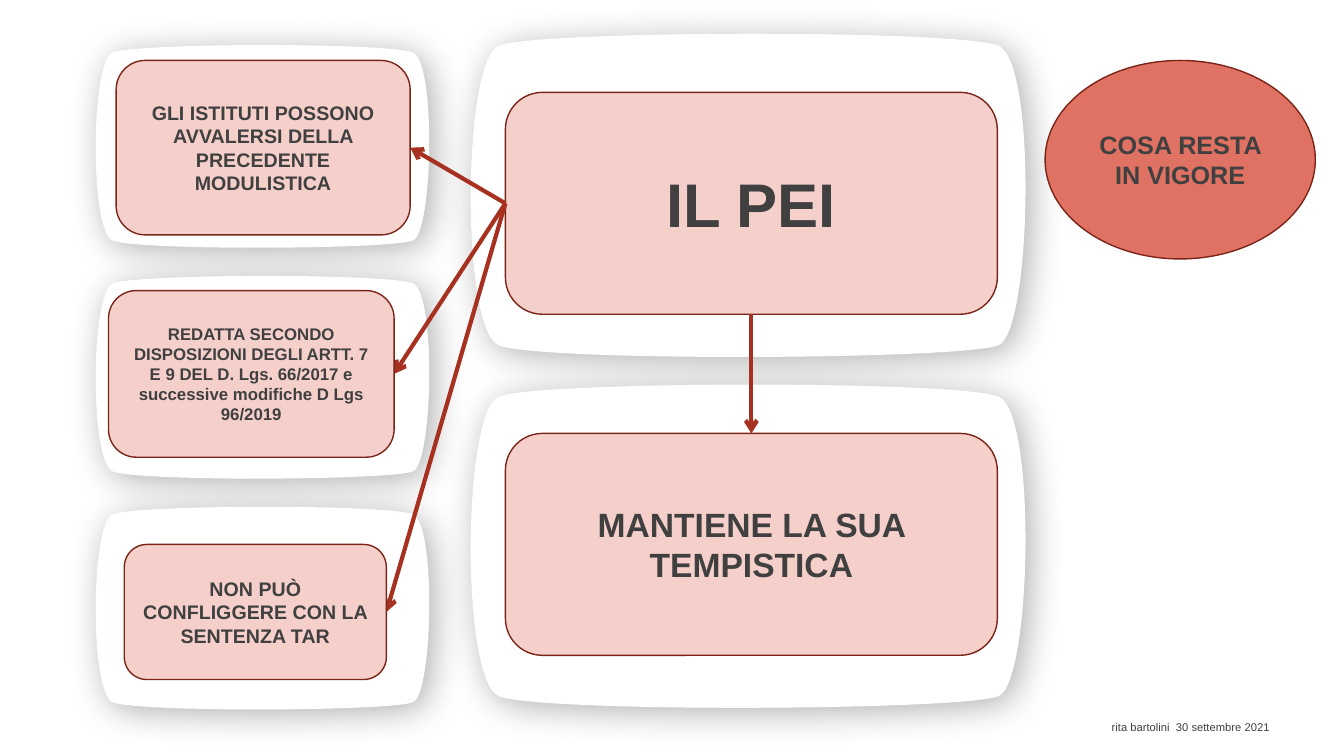
from lxml import etree
from pptx import Presentation
from pptx.dml.color import RGBColor
from pptx.enum.shapes import MSO_CONNECTOR as Connector, MSO_SHAPE as Shape
from pptx.enum.text import MSO_ANCHOR as Anchor, PP_ALIGN as Align
from pptx.oxml import parse_xml
from pptx.oxml.ns import nsdecls, qn
from pptx.util import Pt

WHITE = RGBColor(0xFF, 0xFF, 0xFF)
PINK = RGBColor(0xF5, 0xD0, 0xCB)
CORAL = RGBColor(0xE0, 0x72, 0x63)
OUTLINE = RGBColor(0x7B, 0x24, 0x18)
ARROW = RGBColor(0xA6, 0x31, 0x21)
INK = RGBColor(0x40, 0x40, 0x40)

# Bulging frame in thousandths of its box: a start point, then Bezier segments.
FRAME_START = (933, 50)
FRAME_CURVES = [
    ((1000, 100), (990, 910), (933, 950)),
    ((876, 994), (131, 1000), (66, 950)),
    ((0, 900), (3, 97), (66, 50)),
    ((128, 3), (865, 0), FRAME_START),
]

SHADOW = f"""<a:effectLst {nsdecls('a')}>
  <a:outerShdw blurRad="{Pt(25)}" dist="{Pt(5)}" dir="2700000" algn="ctr" rotWithShape="0">
    <a:srgbClr val="000000"><a:alpha val="30000"/></a:srgbClr>
  </a:outerShdw>
</a:effectLst>"""


def add_segment(outline, tag, points):
    segment = etree.SubElement(outline, qn(tag))
    for x, y in points:
        etree.SubElement(segment, qn("a:pt"), x=str(x), y=str(y))


def add_frame(slide, left, top, width, height):
    """Build the box as a freeform, then give its outline the curved segments."""
    right, bottom = left + width, top + height
    builder = slide.shapes.build_freeform(Pt(left), Pt(top))
    builder.add_line_segments(
        [(Pt(x), Pt(y)) for x, y in ((right, top), (right, bottom), (left, bottom))])
    frame = builder.convert_to_shape()
    outline = frame._element.spPr.find(".//" + qn("a:path"))
    for segment in list(outline):
        outline.remove(segment)
    outline.set("w", "1000")
    outline.set("h", "1000")
    add_segment(outline, "a:moveTo", [FRAME_START])
    for curve in FRAME_CURVES:
        add_segment(outline, "a:cubicBezTo", curve)
    add_segment(outline, "a:close", [])
    frame.fill.solid()
    frame.fill.fore_color.rgb = WHITE
    frame.line.fill.background()
    frame._element.spPr.append(parse_xml(SHADOW))


def write(shape, text, size, bold):
    shape.text_frame.word_wrap = True
    para = shape.text_frame.paragraphs[0]
    para.text = text
    font = para.runs[0].font
    font.name, font.size, font.bold = "Arial", Pt(size), bold
    font.color.rgb = INK
    return para


def add_box(slide, kind, bounds, text, size, fill):
    box = slide.shapes.add_shape(kind, *map(Pt, bounds))
    box.shadow.inherit = False
    box.fill.solid()
    box.fill.fore_color.rgb = fill
    box.line.color.rgb = OUTLINE
    box.line.width = Pt(1)
    box.text_frame.vertical_anchor = Anchor.MIDDLE
    write(box, text, size, True).alignment = Align.CENTER
    return box


def add_arrow(slide, source, source_site, target, target_site):
    """Join two boxes (sites: 0 top, 1 left, 2 bottom, 3 right), under the target."""
    arrow = slide.shapes.add_connector(Connector.STRAIGHT, 0, 0, 0, 0)
    arrow.begin_connect(source, source_site)
    arrow.end_connect(target, target_site)
    arrow.line.color.rgb = ARROW
    arrow.line.width = Pt(3)
    etree.SubElement(arrow.line._get_or_add_ln(), qn("a:tailEnd"), type="arrow")
    etree.SubElement(arrow._element.spPr, qn("a:effectLst"))
    target._element.addprevious(arrow._element)


def add_frames(slide):
    for row in range(2):
        add_frame(slide, 329, 20.9 + row * 250.6, 412, 237.6)
    for row in range(3):
        add_frame(slide, 64, 30.2 + row * 164.9, 247.7, 149)


def add_map(slide):
    plan = add_box(slide, Shape.ROUNDED_RECTANGLE, (361, 66, 351.4, 158.5), "IL PEI", 44, PINK)
    timing = add_box(slide, Shape.ROUNDED_RECTANGLE, (361, 309.6, 351.4, 158.5),
                     "MANTIENE LA SUA TEMPISTICA", 24, PINK)
    add_arrow(slide, plan, 2, timing, 0)
    conditions = [
        ((77.5, 207.6, 204, 119),
         "REDATTA SECONDO DISPOSIZIONI DEGLI ARTT. 7 E 9 DEL D. Lgs. 66/2017 "
         "e successive modifiche D Lgs 96/2019", 12),
        ((83, 43.2, 210, 124.6),
         "GLI ISTITUTI POSSONO AVVALERSI DELLA PRECEDENTE MODULISTICA", 14),
        ((88.8, 388.9, 187.2, 96.5), "NON PUÒ CONFLIGGERE CON LA SENTENZA TAR", 14),
    ]
    for bounds, text, size in conditions:
        condition = add_box(slide, Shape.ROUNDED_RECTANGLE, bounds, text, size, PINK)
        add_arrow(slide, plan, 1, condition, 3)


def add_signature(slide):
    signature = slide.shapes.add_textbox(Pt(787), Pt(511.2), Pt(172.8), Pt(28.8))
    write(signature, "rita bartolini  30 settembre 2021", 8, False)


def main():
    deck = Presentation()
    deck.slide_width, deck.slide_height = Pt(960), Pt(540)
    slide = deck.slides.add_slide(deck.slide_layouts[6])
    add_frames(slide)
    add_map(slide)
    add_signature(slide)
    add_box(slide, Shape.OVAL, (746.5, 43.2, 193, 141.8), "COSA RESTA IN VIGORE", 18, CORAL)
    deck.save("out.pptx")


if __name__ == "__main__":
    main()
